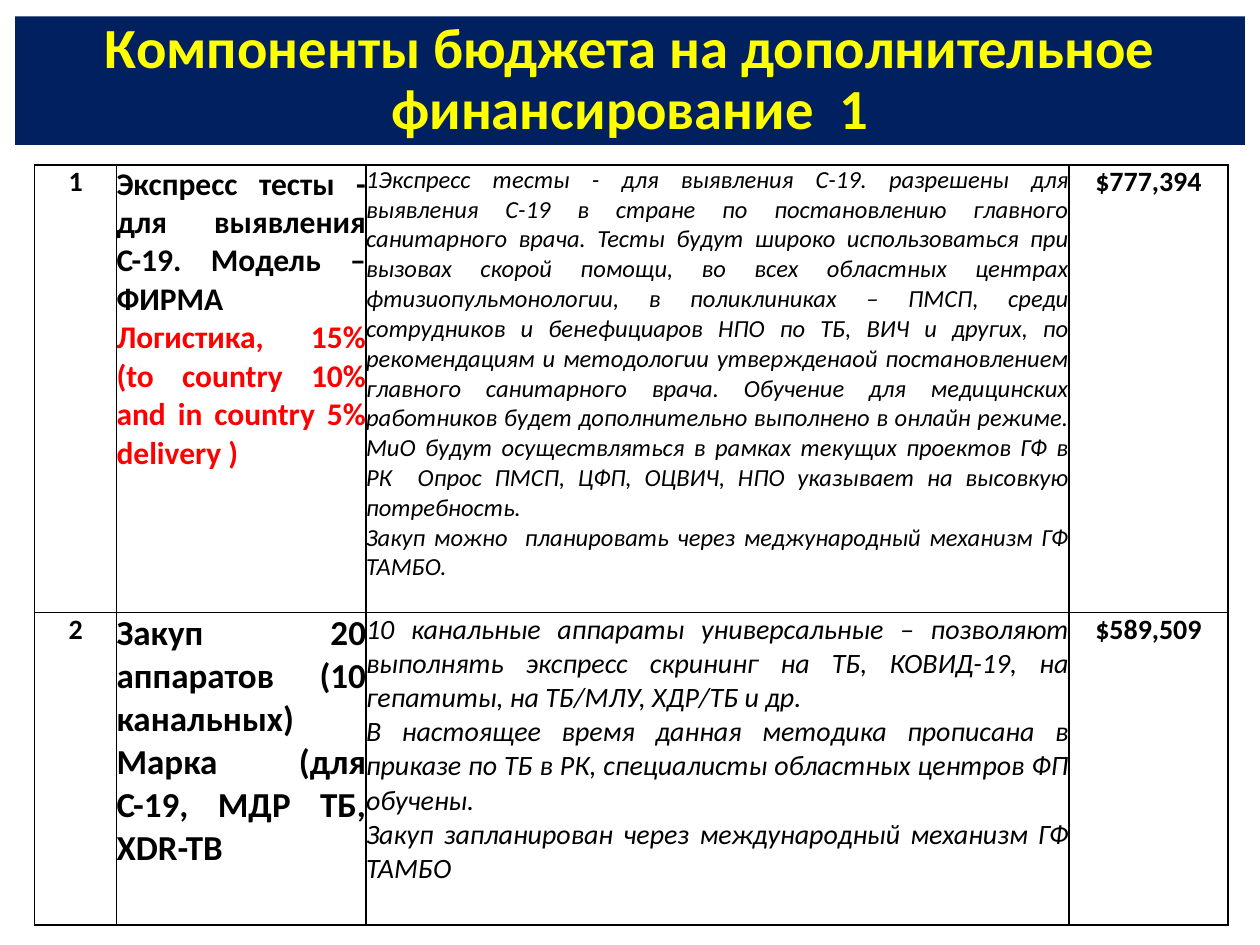
from lxml.etree import SubElement
from pptx import Presentation
from pptx.dml.color import RGBColor
from pptx.enum.shapes import MSO_SHAPE as Shape
from pptx.enum.text import MSO_ANCHOR as Anchor, PP_ALIGN as Align
from pptx.oxml.ns import qn
from pptx.util import Pt

COLORS = {
    "navy": "002060",
    "yellow": "FFFF00",
    "red": "FF0000",
    "black": "000000",
    "white": "FFFFFF",
}
FONT = "Calibri"

TITLE = "Компоненты бюджета на дополнительное финансирование  1"
COLUMN_WIDTHS = [46.8, 142.56, 401.76, 90.72]
ROW_HEIGHTS = [255.6, 178.56]

# Each row: number, component, description, amount; text size of the middle two
BUDGET = [
    {
        "number": "1",
        "component": [
            ("Экспресс тесты - для выявления С-19. Модель –ФИРМА", "black"),
            ("Логистика, 15% (to country 10% and in country 5% delivery )", "red"),
        ],
        "component_size": 18,
        "description": [
            "1Экспресс тесты - для выявления С-19. разрешены для выявления С-19 "
            "в стране по постановлению главного санитарного врача. Тесты будут "
            "широко использоваться при вызовах скорой помощи, во всех областных "
            "центрах фтизиопульмонологии, в поликлиниках – ПМСП, среди "
            "сотрудников и бенефициаров НПО по ТБ, ВИЧ и других, по "
            "рекомендациям и методологии утвержденаой постановлением главного "
            "санитарного врача. Обучение для медицинских работников будет "
            "дополнительно выполнено в онлайн режиме. МиО будут осуществляться "
            "в рамках текущих проектов ГФ в РК  Опрос ПМСП, ЦФП, ОЦВИЧ, НПО "
            "указывает на высовкую потребность.",
            "Закуп можно  планировать через меджународный механизм ГФ ТАМБО.",
        ],
        "description_size": 14,
        "amount": "$777,394",
    },
    {
        "number": "2",
        "component": [
            ("Закуп 20 аппаратов (10 канальных) Марка (для С-19, МДР ТБ, XDR-TB",
             "black"),
        ],
        "component_size": 20,
        "description": [
            "10 канальные аппараты универсальные – позволяют выполнять экспресс "
            "скрининг на ТБ, КОВИД-19, на гепатиты, на ТБ/МЛУ, ХДР/ТБ и др.",
            "В настоящее время данная методика прописана в приказе по ТБ в РК, "
            "специалисты областных центров ФП обучены.",
            "Закуп запланирован через международный механизм ГФ ТАМБО",
        ],
        "description_size": 16,
        "amount": "$589,509",
    },
]


def color(name):
    return RGBColor.from_string(COLORS[name])


def write(para, text, size=16, fill="black", bold=False, italic=False,
          align=Align.CENTER, spacing=None):
    para.alignment = align
    if spacing:
        para.line_spacing = spacing
    span = para.add_run()
    span.text = text
    span.font.name = FONT
    span.font.size = Pt(size)
    span.font.bold = bold
    span.font.italic = italic
    span.font.color.rgb = color(fill)


def add_banner(page, text):
    box = page.shapes.add_shape(Shape.RECTANGLE, Pt(8.64), Pt(9.36),
                                Pt(702.72), Pt(73.44))
    box.shadow.inherit = False
    box.fill.solid()
    box.fill.fore_color.rgb = color("navy")
    box.line.fill.background()
    frame = box.text_frame
    frame.word_wrap = True
    frame.vertical_anchor = Anchor.MIDDLE
    frame.margin_top = frame.margin_bottom = 0
    write(frame.paragraphs[0], text, size=32.4, fill="yellow", bold=True,
          spacing=0.9)


def style_cell(cell):
    cell.margin_left = cell.margin_right = 0
    cell.margin_top = cell.margin_bottom = 0
    cell.vertical_anchor = Anchor.TOP
    properties = cell._tc.get_or_add_tcPr()
    for side in ("lnL", "lnR", "lnT", "lnB"):
        line = SubElement(properties, qn(f"a:{side}"), w=str(Pt(1)))
        fill = SubElement(line, qn("a:solidFill"))
        SubElement(fill, qn("a:srgbClr"), val=COLORS["black"])
    cell.fill.solid()
    cell.fill.fore_color.rgb = color("white")


def fill_cell(cell, lines, **look):
    """Write (text, colour) lines as the paragraphs of one cell."""
    style_cell(cell)
    frame = cell.text_frame
    for index, (text, fill) in enumerate(lines):
        para = frame.add_paragraph() if index else frame.paragraphs[0]
        write(para, text, fill=fill, **look)


def add_budget(page):
    frame = page.shapes.add_table(
        len(ROW_HEIGHTS), len(COLUMN_WIDTHS), Pt(19.8), Pt(94.32),
        Pt(sum(COLUMN_WIDTHS)), Pt(sum(ROW_HEIGHTS)))
    table = frame.table
    table.first_row = table.horz_banding = False
    for column, width in zip(table.columns, COLUMN_WIDTHS):
        column.width = Pt(width)
    for row, height, item in zip(table.rows, ROW_HEIGHTS, BUDGET):
        row.height = Pt(height)
        number, component, description, amount = row.cells
        fill_cell(number, [(item["number"], "black")], bold=True)
        fill_cell(component, item["component"], size=item["component_size"],
                  bold=True, align=Align.JUSTIFY)
        fill_cell(description, [(text, "black") for text in item["description"]],
                  size=item["description_size"], italic=True,
                  align=Align.JUSTIFY)
        fill_cell(amount, [(item["amount"], "black")], bold=True)


def main():
    deck = Presentation()
    deck.slide_width, deck.slide_height = Pt(720), Pt(540)
    page = deck.slides.add_slide(deck.slide_layouts[6])
    # Title banner
    add_banner(page, TITLE)
    # Budget components
    add_budget(page)
    deck.save("out.pptx")


if __name__ == "__main__":
    main()
